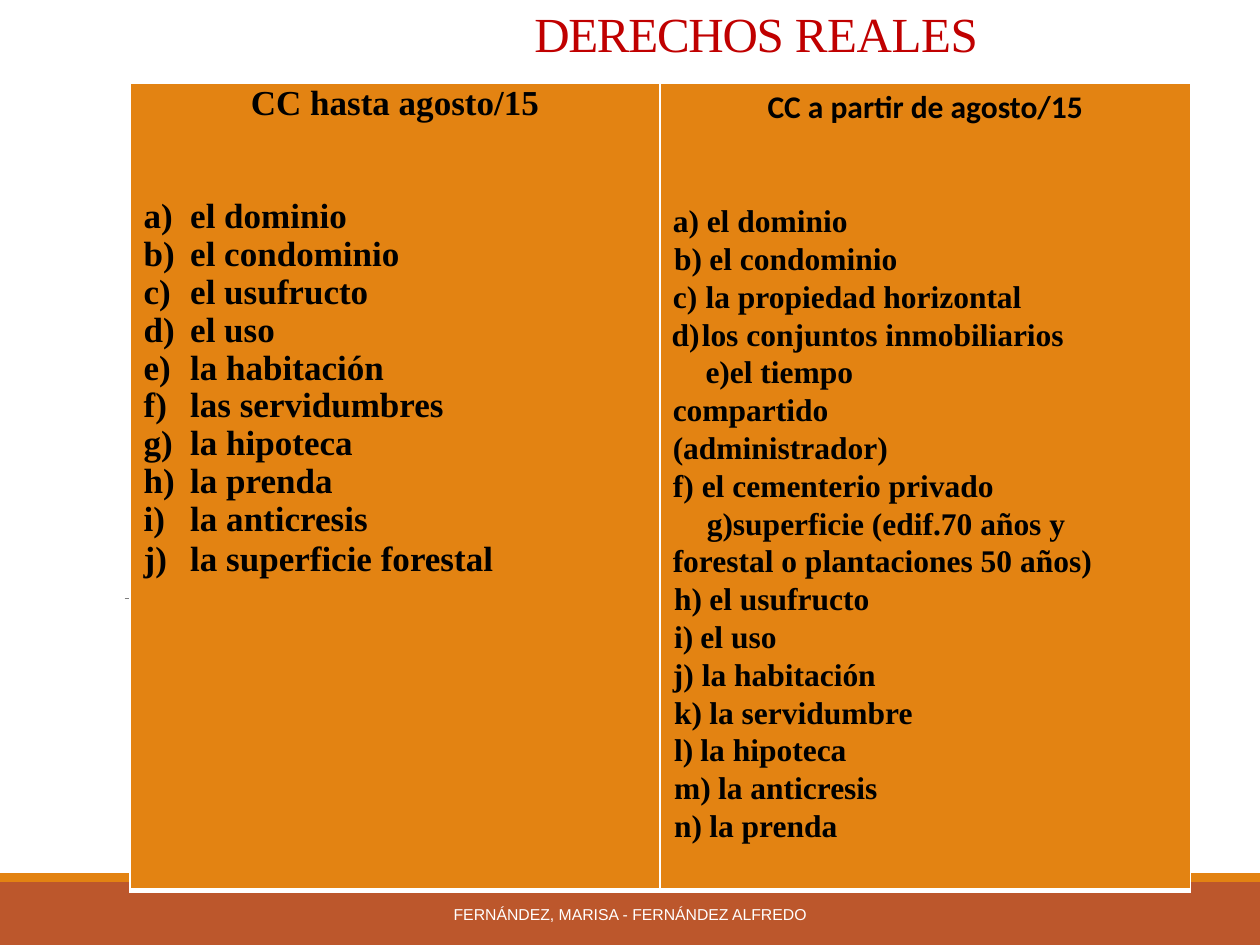
from dataclasses import dataclass

from lxml.etree import SubElement
from pptx import Presentation
from pptx.dml.color import RGBColor
from pptx.enum.shapes import MSO_CONNECTOR, MSO_SHAPE
from pptx.enum.text import MSO_ANCHOR, PP_ALIGN
from pptx.oxml.ns import qn
from pptx.util import Inches, Pt

ORANGE, RUST, WHITE, BLACK = "E38312", "BC572C", "FFFFFF", "000000"
SERIF = "Times New Roman"


@dataclass(frozen=True)
class Style:
    font: str
    size: float
    color: str = BLACK
    bold: bool = False


@dataclass(frozen=True)
class Item:
    text: str
    margin: float = 0.39
    indent: float = -0.37
    spacing: float = 21.6


@dataclass(frozen=True)
class Column:
    heading: str
    heading_style: Style
    heading_top: float
    items: list[Item]
    item_style: Style
    items_top: float


COLUMNS = [
    Column(
        "CC hasta agosto/15", Style(SERIF, 20, bold=True), 0.01,
        [
            Item("el dominio", spacing=22.8),
            Item("el condominio"),
            Item("el usufructo"),
            Item("el uso"),
            Item("la habitación"),
            Item("las servidumbres"),
            Item("la hipoteca"),
            Item("la prenda"),
            Item("la anticresis"),
            Item("la superficie forestal", spacing=22.8),
        ],
        Style(SERIF, 20, bold=True), 0.01,
    ),
    Column(
        "CC a partir de agosto/15", Style("Calibri", 18, bold=True), 0.04,
        [
            Item("el dominio", 0.28, -0.27),
            Item("el condominio", 0.3, -0.28),
            Item("la propiedad horizontal", 0.27, -0.26),
            Item("los conjuntos inmobiliarios", 0.24, -0.24),
            Item("el tiempo\ncompartido\n(administrador)", 0.01, 0.26),
            Item("el cementerio privado", 0.24, -0.23),
            Item("superficie (edif.70 años y forestal o plantaciones 50 años)", 0.01, 0.27),
            Item("el usufructo", 0.3, -0.28),
            Item("el uso", 0.23, -0.21),
            Item("la habitación", 0.24, -0.23),
            Item("la servidumbre", 0.3, -0.28),
            Item("la hipoteca", 0.23, -0.21),
            Item("la anticresis", 0.37, -0.35),
            Item("la prenda", 0.3, -0.28),
        ],
        Style(SERIF, 18, bold=True), 0.05,
    ),
]


def rgb(color: str) -> RGBColor:
    return RGBColor.from_string(color)


def add_span(para, text: str, style: Style, tracking: int = 0) -> None:
    """Add a run; tracking is in hundredths of a point."""
    span = para.add_run()
    span.text = text
    span.font.name = style.font
    span.font.size = Pt(style.size)
    span.font.bold = style.bold
    span.font.color.rgb = rgb(style.color)
    if tracking:
        span.font._element.set("spc", str(tracking))


def add_label(page, left: float, top: float, width: float, height: float):
    box = page.shapes.add_textbox(Inches(left), Inches(top), Inches(width), Inches(height))
    frame = box.text_frame
    frame.word_wrap = True
    frame.margin_left = frame.margin_right = frame.margin_top = frame.margin_bottom = 0
    return frame.paragraphs[0]


def add_band(page, top: float, height: float, color: str) -> None:
    band = page.shapes.add_shape(MSO_SHAPE.RECTANGLE, 0, Inches(top), Inches(10), Inches(height))
    band.shadow.inherit = False
    band.fill.solid()
    band.fill.fore_color.rgb = rgb(color)
    band.line.fill.background()


def format_cell(cell, top_margin: float, borders: dict[str, float]) -> None:
    """Fill the cell and draw its borders; a width of 0 hides a border."""
    cell.margin_left, cell.margin_right = Inches(0.09), Inches(0.14)
    cell.margin_top, cell.margin_bottom = Inches(top_margin), 0
    cell.vertical_anchor = MSO_ANCHOR.TOP
    properties = cell._tc.get_or_add_tcPr()
    for side, width in borders.items():
        line = SubElement(properties, qn(f"a:ln{side}"), w=str(int(Pt(width))))
        if width:
            paint = SubElement(line, qn("a:solidFill"))
            SubElement(paint, qn("a:srgbClr"), val=WHITE)
        else:
            SubElement(line, qn("a:noFill"))
    cell.fill.solid()
    cell.fill.fore_color.rgb = rgb(ORANGE)


def add_items(cell, items: list[Item], style: Style) -> None:
    frame = cell.text_frame
    for index, item in enumerate(items):
        para = frame.add_paragraph() if index else frame.paragraphs[0]
        para.line_spacing = Pt(item.spacing)
        properties = para._p.get_or_add_pPr()
        properties.set("marL", str(Inches(item.margin)))
        properties.set("indent", str(Inches(item.indent)))
        SubElement(properties, qn("a:buAutoNum"), type="alphaLcParenR")
        for row, text in enumerate(item.text.split("\n")):
            if row:
                para.add_line_break()
            add_span(para, text, style)


def add_comparison(page) -> None:
    frame = page.shapes.add_table(2, 2, Inches(1.03), Inches(0.66), Inches(8.42), Inches(6.41))
    table = frame.table
    table.first_row = table.horz_banding = False
    table.rows[0].height, table.rows[1].height = Inches(0.89), Inches(5.52)
    for index, column in enumerate(COLUMNS):
        table.columns[index].width = Inches(4.21)
        heading, body = table.cell(0, index), table.cell(1, index)
        format_cell(heading, column.heading_top, {"L": 1, "R": 1, "T": 1, "B": 0})
        format_cell(body, column.items_top, {"L": 1, "R": 1, "T": 0, "B": 3})
        heading.margin_right = heading.margin_left
        para = heading.text_frame.paragraphs[0]
        para.alignment = PP_ALIGN.CENTER
        add_span(para, column.heading, column.heading_style)
        add_items(body, column.items, column.item_style)


def main() -> None:
    deck = Presentation()
    deck.slide_width, deck.slide_height = Inches(10), Inches(7.5)
    page = deck.slides.add_slide(deck.slide_layouts[6])

    # Footer bands
    add_band(page, 7, 0.5, RUST)
    add_band(page, 6.93, 0.07, ORANGE)

    # Short rule beside the table
    rule = page.shapes.add_connector(
        MSO_CONNECTOR.STRAIGHT, Inches(0.99), Inches(4.75), Inches(1.03), Inches(4.75))
    rule.line.color.rgb = rgb("7E7E7E")
    rule.line.width = Pt(0.48)
    SubElement(rule._element.spPr, qn("a:effectLst"))

    # Comparison of the two codes
    add_comparison(page)

    # Title and footer
    title = add_label(page, 4.24, 0.03, 3.65, 0.48)
    title_style = Style(SERIF, 28, "C00000")
    add_span(title, "DERECHOS ", title_style, -70)
    add_span(title, "REALES", title_style, -20)
    footer = add_label(page, 3.58, 7.18, 2.84, 0.17)
    footer.alignment = PP_ALIGN.CENTER
    add_span(footer, "FERNÁNDEZ, MARISA - FERNÁNDEZ ALFREDO", Style("Arial", 9, WHITE))

    deck.save("out.pptx")


if __name__ == "__main__":
    main()
